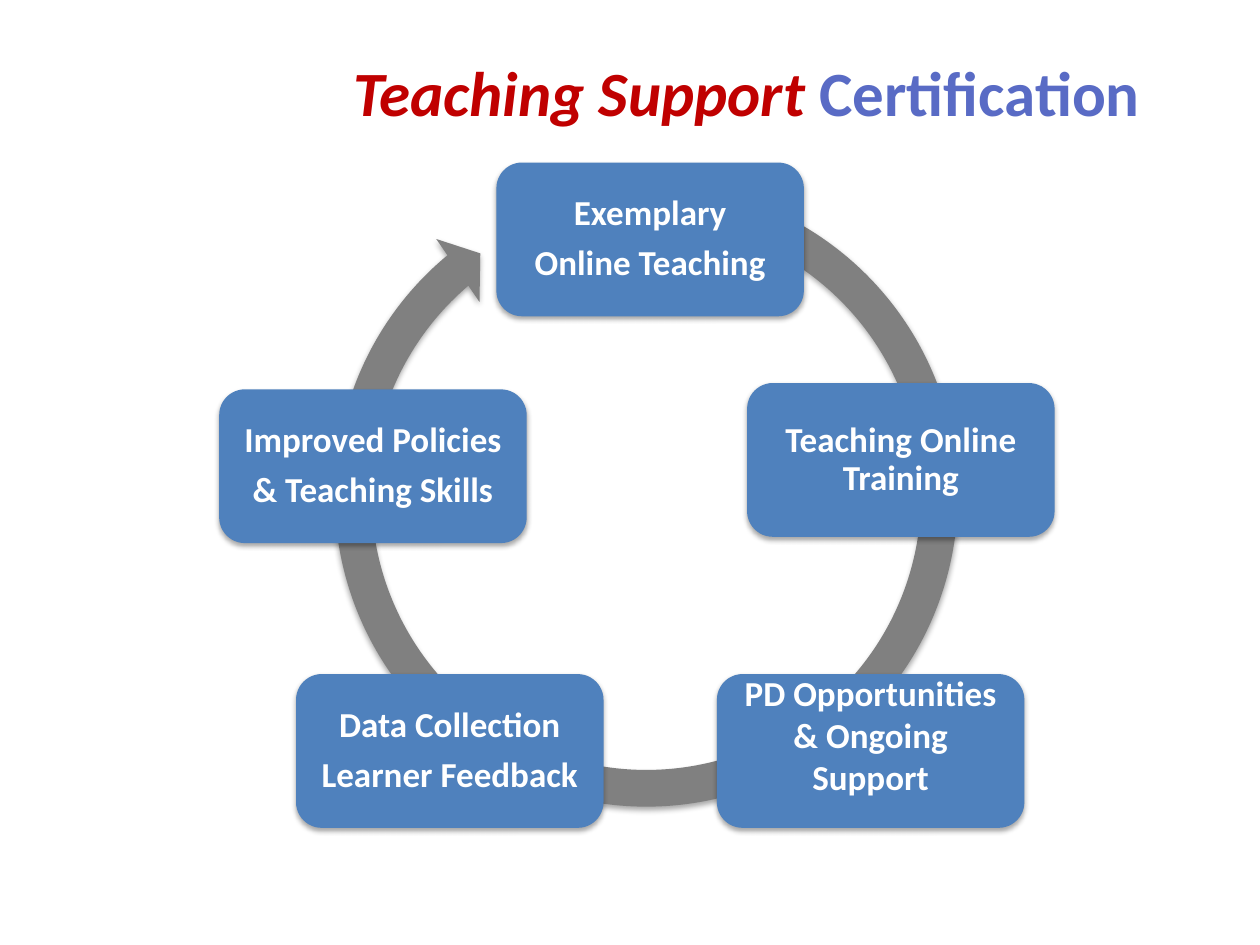
from dataclasses import dataclass

import pptx
import pptx.dml.color
import pptx.enum.shapes
import pptx.enum.text
import pptx.oxml
import pptx.oxml.ns
import pptx.util

Inches = pptx.util.Inches
Pt = pptx.util.Pt
RGB = pptx.dml.color.RGBColor
Shape = pptx.enum.shapes.MSO_SHAPE


@dataclass(frozen=True)
class Theme:
    font: str = "Calibri"
    title_size: float = 36
    step_size: float = 20
    accent: str = "C00000"
    title: str = "596BC5"
    box: str = "4F81BD"
    box_text: str = "FFFFFF"
    ring: str = "808080"


@dataclass(frozen=True)
class Step:
    left: float
    top: float
    lines: tuple[str, ...]
    line_spacing: float = 0.9
    space_after: float = 7
    bottom_inset: float = 0.08


THEME = Theme()
BOX_WIDTH, BOX_HEIGHT, INSET = 2.44, 1.22, 0.08
STEPS = (
    Step(3.94, 1.29, ("Exemplary", "Online Teaching")),
    Step(5.93, 3.04, ("Teaching Online Training",)),
    Step(5.69, 5.35, ("PD Opportunities", "& Ongoing Support"),
         line_spacing=1, space_after=0, bottom_inset=0.34),
    Step(2.35, 5.35, ("Data Collection", "Learner Feedback")),
    Step(1.74, 3.09, ("Improved Policies", "& Teaching Skills")),
)


def add_run(p, text: str, size: float, color: str, italic: bool = False) -> None:
    r = p.add_run()
    r.text = text
    r.font.name = THEME.font
    r.font.size = Pt(size)
    r.font.bold = True
    r.font.italic = italic
    r.font.color.rgb = RGB.from_string(color)


def add_soft_shadow(sp) -> None:
    """Give the shape a faint shadow straight below it."""
    sp.shadow.inherit = False
    effects = sp._element.spPr.find(pptx.oxml.ns.qn("a:effectLst"))
    effects.append(pptx.oxml.parse_xml(
        f'<a:outerShdw {pptx.oxml.ns.nsdecls("a")} blurRad="{Pt(3.1)}" '
        f'dist="{Pt(1.8)}" dir="5400000" rotWithShape="0">'
        '<a:srgbClr val="000000"><a:alpha val="35000"/></a:srgbClr>'
        '</a:outerShdw>'))


def add_filled_shape(s, kind, left: float, top: float, width: float,
                     height: float, color: str):
    sp = s.shapes.add_shape(kind, Inches(left), Inches(top),
                            Inches(width), Inches(height))
    sp.fill.solid()
    sp.fill.fore_color.rgb = RGB.from_string(color)
    sp.line.fill.background()
    add_soft_shadow(sp)
    return sp


def add_title(s) -> None:
    tf = s.shapes.add_textbox(Inches(2.01), Inches(0.33),
                              Inches(7.83), Inches(0.79)).text_frame
    tf.word_wrap = True
    tf.vertical_anchor = pptx.enum.text.MSO_ANCHOR.MIDDLE
    p = tf.paragraphs[0]
    p.alignment = pptx.enum.text.PP_ALIGN.CENTER
    add_run(p, "Teaching Support ", THEME.title_size, THEME.accent, italic=True)
    add_run(p, "Certification", THEME.title_size, THEME.title)


def add_ring(s) -> None:
    ring = add_filled_shape(s, Shape.CIRCULAR_ARROW, 2.5, 1.3, 5.26, 5.26, THEME.ring)
    per_degree = 0.6  # adjustment units in one degree
    thickness, head_width = 5.54 / 100, 5.76 / 100
    head_angle, end_angle, start_angle = (
        degrees * per_degree for degrees in (5.51, 230.01, 289.52))
    values = (thickness, head_angle, end_angle, start_angle, head_width)
    for i, value in enumerate(values):
        ring.adjustments[i] = value


def add_step(s, step: Step) -> None:
    sp = add_filled_shape(s, Shape.ROUNDED_RECTANGLE, step.left, step.top,
                          BOX_WIDTH, BOX_HEIGHT, THEME.box)
    tf = sp.text_frame
    tf.word_wrap = True
    tf.vertical_anchor = pptx.enum.text.MSO_ANCHOR.MIDDLE
    tf.margin_left = tf.margin_right = tf.margin_top = Inches(INSET)
    tf.margin_bottom = Inches(step.bottom_inset)
    for i, line in enumerate(step.lines):
        p = tf.add_paragraph() if i else tf.paragraphs[0]
        p.alignment = pptx.enum.text.PP_ALIGN.CENTER
        p.line_spacing = step.line_spacing
        p.space_after = Pt(step.space_after)
        add_run(p, line, THEME.step_size, THEME.box_text)


def main() -> None:
    prs = pptx.Presentation()
    prs.slide_width, prs.slide_height = Inches(10), Inches(7.5)
    s = prs.slides.add_slide(prs.slide_layouts[6])
    add_title(s)
    add_ring(s)
    for step in STEPS:
        add_step(s, step)
    prs.save("out.pptx")


if __name__ == "__main__":
    main()
